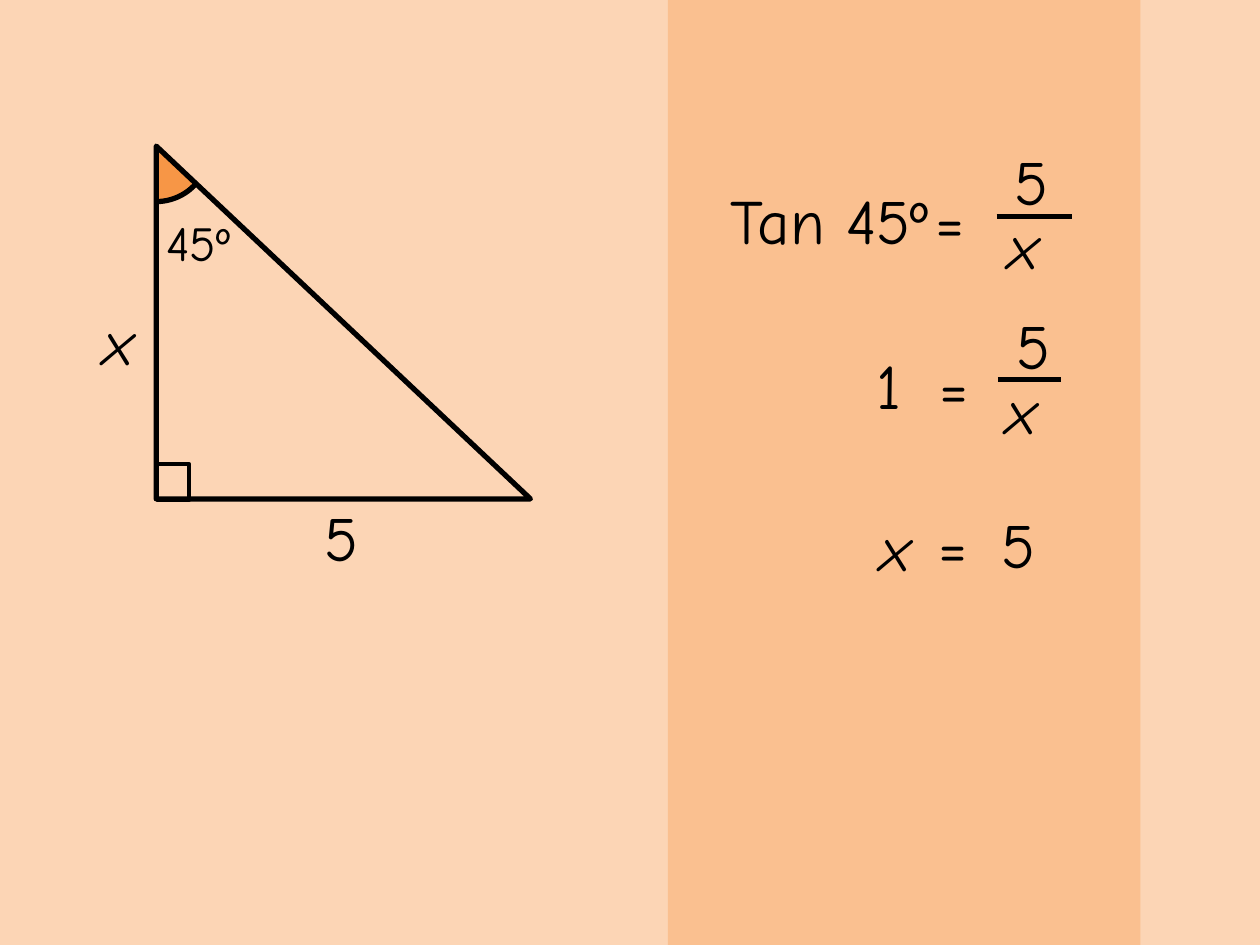
"""Build a slide that solves a 45º right triangle with the tangent."""
import math
import pptx
import pptx.dml.color
import pptx.enum.shapes
import pptx.enum.text
import pptx.oxml
import pptx.util

PALE = pptx.dml.color.RGBColor(0xFC, 0xD5, 0xB5)
PEACH = pptx.dml.color.RGBColor(0xFA, 0xC0, 0x90)
ORANGE = pptx.dml.color.RGBColor(0xF7, 0x96, 0x46)
BLACK = pptx.dml.color.RGBColor(0, 0, 0)
SHAPES = pptx.enum.shapes.MSO_SHAPE
LEFT = pptx.enum.text.PP_ALIGN.LEFT
CENTER = pptx.enum.text.PP_ALIGN.CENTER

deck = pptx.Presentation()
deck.slide_width = pptx.util.Inches(10)
deck.slide_height = pptx.util.Inches(7.5)
COLUMN = deck.slide_width / 100
ROW = deck.slide_height / 75
page = deck.slides.add_slide(deck.slide_layouts[6])
page.background.fill.solid()
page.background.fill.fore_color.rgb = PALE


def place(*cells):
    """Turn alternating columns and rows into lengths."""
    return [round(cell * (ROW if index % 2 else COLUMN)) for index, cell in enumerate(cells)]


def paint(shape, fill, weight):
    """Give a shape its fill and outline, or none of either."""
    shape.shadow.inherit = False
    if fill is None:
        shape.fill.background()
    else:
        shape.fill.solid()
        shape.fill.fore_color.rgb = fill
    if weight:
        shape.line.color.rgb = BLACK
        shape.line.width = pptx.util.Pt(weight)
    else:
        shape.line.fill.background()


panel = page.shapes.add_shape(SHAPES.RECTANGLE, *place(53, -0.5, 37.5, 75.5))
paint(panel, PEACH, 0)

apex = (12.4, 11.8)
radius = 4.2
arc_points = [
    place(apex[0] + radius * math.cos(angle), apex[1] + radius * math.sin(angle))
    for angle in (math.radians(90 - 4 * step) for step in range(13))
]
for points, closed, fill, weight in (
    (arc_points + [place(*apex)], True, ORANGE, 0),
    (arc_points, False, None, 3),
):
    builder = page.shapes.build_freeform(*points[0])
    builder.add_line_segments(points[1:], close=closed)
    paint(builder.convert_to_shape(), fill, weight)

for preset, cells, weight in (
    (SHAPES.RIGHT_TRIANGLE, (12.4, 11.6, 29.7, 28), 3),
    (SHAPES.RECTANGLE, (12.5, 36.8, 2.5, 2.9), 2.25),
):
    paint(page.shapes.add_shape(preset, *place(*cells)), None, weight)

labels = (
    ("45º", 12.2, 16.4, 10.7, LEFT, 28),
    ("x", 7.2, 23.5, 4.5, LEFT, 36),
    ("5", 24.8, 39.1, 10.7, LEFT, 36),
    ("Tan 45º", 57, 13.9, 22, LEFT, 36),
    ("=", 73.3, 13.9, 8.6, LEFT, 36),
    ("5", 75.9, 10.8, 12, CENTER, 36),
    ("x", 75.8, 15.9, 10.8, CENTER, 36),
    ("1", 68.6, 27, 6.3, LEFT, 36),
    ("=", 72.2, 27.1, 7.1, CENTER, 36),
    ("5", 77.1, 23.8, 9.9, CENTER, 36),
    ("x", 76.6, 29, 8.9, CENTER, 36),
    ("x", 68.9, 39.9, 6.3, LEFT, 36),
    ("=", 72.1, 39.7, 7.1, CENTER, 36),
    ("5", 75.9, 39.6, 9.9, CENTER, 36),
)
for text, left, top, width, alignment, size in labels:
    height = 7.1 if size == 36 else 5.7
    box = page.shapes.add_textbox(*place(left, top, width, height))
    box.text_frame.word_wrap = True
    para = box.text_frame.paragraphs[0]
    para.alignment = alignment
    span = para.add_run()
    span.text = text
    span.font.color.rgb = BLACK
    formats = {"name": "Comic Neue", "size": pptx.util.Pt(size), "italic": text == "x"}
    for name, value in formats.items():
        setattr(span.font, name, value)

for start, end, row in ((79.1, 85.1, 17.2), (79.2, 84.2, 30.1)):
    bar = page.shapes.add_connector(
        pptx.enum.shapes.MSO_CONNECTOR.STRAIGHT, *place(start, row, end, row)
    )
    bar.line.color.rgb = BLACK
    bar.line.width = pptx.util.Pt(3)
    properties = bar._element.spPr
    properties.append(pptx.oxml.parse_xml(
        '<a:effectLst xmlns:a="http://schemas.openxmlformats.org/drawingml/2006/main"/>'
    ))

deck.save("out.pptx")
